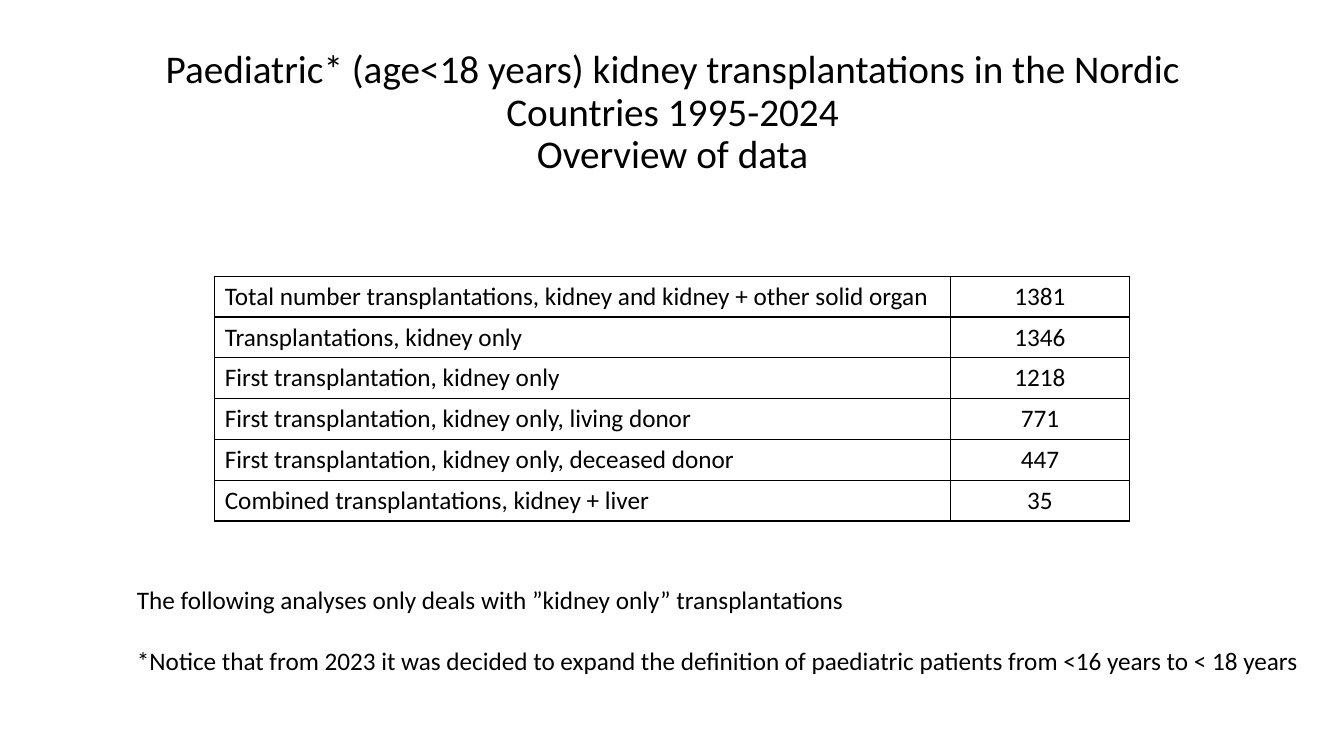
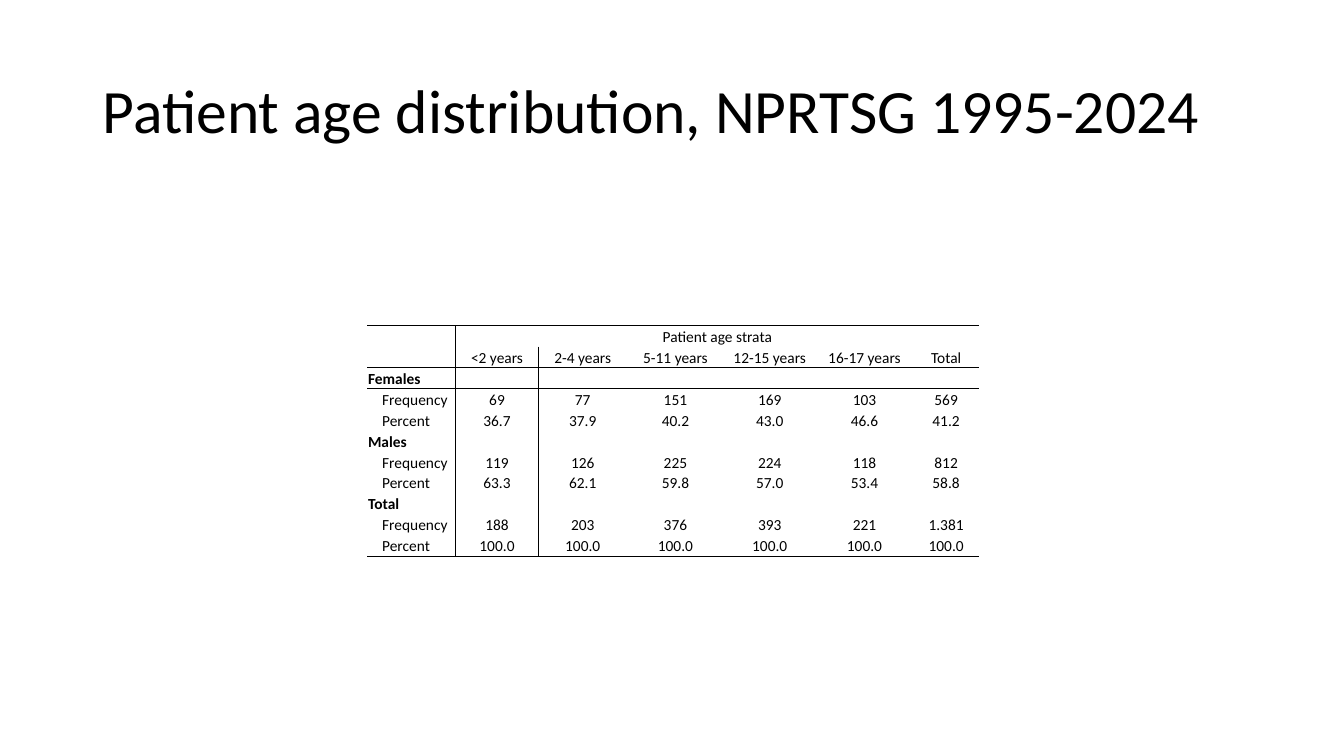
import dataclasses

import lxml.etree
import pptx
import pptx.dml.color
import pptx.enum.text
import pptx.oxml.ns
import pptx.util

Inches = pptx.util.Inches
Pt = pptx.util.Pt
Align = pptx.enum.text.PP_ALIGN
Anchor = pptx.enum.text.MSO_ANCHOR
qn = pptx.oxml.ns.qn

NO_STYLE_NO_GRID = "{2D5ABB26-0587-4C30-8999-92F81FD0307C}"

OVERVIEW = [
    ("Total number transplantations, kidney and kidney + other solid organ", "1381"),
    ("Transplantations, kidney only", "1346"),
    ("First transplantation, kidney only", "1218"),
    ("First transplantation, kidney only, living donor", "771"),
    ("First transplantation, kidney only, deceased donor", "447"),
    ("Combined transplantations, kidney + liver", "35"),
]

AGE_STRATA = ["<2 years", "2-4 years", "5-11 years", "12-15 years", "16-17 years", "Total"]
AGE_GROUPS = {
    "Females": (["69", "77", "151", "169", "103", "569"],
                ["36.7", "37.9", "40.2", "43.0", "46.6", "41.2"]),
    "Males": (["119", "126", "225", "224", "118", "812"],
              ["63.3", "62.1", "59.8", "57.0", "53.4", "58.8"]),
    "Total": (["188", "203", "376", "393", "221", "1.381"],
              ["100.0"] * 6),
}


@dataclasses.dataclass(frozen=True)
class Theme:
    font: str = "Calibri"
    ink: str = "000000"
    title_size: int = 44
    long_title_size: int = 28
    body_size: int = 18
    small_size: int = 11
    grid_width: float = 1
    rule_width: float = 0.5


class DeckBuilder:
    def __init__(self, theme):
        self.theme = theme
        self.deck = pptx.Presentation()
        self.deck.slide_width = Inches(13.33)
        self.deck.slide_height = Inches(7.5)
        self.page = None

    def add_page(self):
        self.page = self.deck.slides.add_slide(self.deck.slide_layouts[6])

    def add_span(self, para, text, size, bold=False):
        span = para.add_run()
        span.text = text
        span.font.name = self.theme.font
        span.font.size = Pt(size)
        span.font.bold = bold
        span.font.color.rgb = pptx.dml.color.RGBColor.from_string(self.theme.ink)

    def add_title(self, lines, size, align):
        box = self.page.shapes.add_textbox(Inches(0.92), Inches(0.4), Inches(11.5), Inches(1.45))
        frame = box.text_frame
        frame.word_wrap = True
        frame.vertical_anchor = Anchor.MIDDLE
        para = frame.paragraphs[0]
        para.alignment = align
        para.line_spacing = 0.9
        for index, line in enumerate(lines):
            if index:
                para.add_line_break()
            self.add_span(para, line, size)

    def add_notes_block(self, left, top, width, height, notes, gap):
        box = self.page.shapes.add_textbox(left, top, width, height)
        frame = box.text_frame
        frame.word_wrap = False
        frame.auto_size = pptx.enum.text.MSO_AUTO_SIZE.SHAPE_TO_FIT_TEXT
        for index, note in enumerate(notes):
            para = frame.add_paragraph() if index else frame.paragraphs[0]
            if index:
                para.space_before = Pt(gap)
            self.add_span(para, note, self.theme.body_size)

    def add_plain_table(self, left, top, height, row_count, column_widths):
        """Add a table without banding, grid or built-in style."""
        widths = [Inches(width) for width in column_widths]
        frame = self.page.shapes.add_table(row_count, len(widths), left, top, sum(widths), height)
        table = frame.table
        table.first_row = False
        table.horz_banding = False
        table._tbl.tblPr.find(qn("a:tableStyleId")).text = NO_STYLE_NO_GRID
        for column, width in zip(table.columns, widths):
            column.width = width
        return table

    def fill_cell(self, cell, text, size, align, sides, line_width, bold=False):
        """Write the text and rule the given sides, a subset of "LRTB"."""
        para = cell.text_frame.paragraphs[0]
        para.alignment = align
        if text:
            self.add_span(para, text, size, bold)
        else:
            # An empty cell needs its own type size, or its row would grow.
            lxml.etree.SubElement(para._p, qn("a:endParaRPr"), sz=str(size * 100))
        properties = cell._tc.get_or_add_tcPr()
        for side in sides:
            line = lxml.etree.SubElement(properties, qn(f"a:ln{side}"), w=str(Pt(line_width)))
            solid = lxml.etree.SubElement(line, qn("a:solidFill"))
            lxml.etree.SubElement(solid, qn("a:srgbClr"), val=self.theme.ink)
        cell.fill.background()


def build_overview(builder):
    theme = builder.theme
    builder.add_page()
    builder.add_title(
        ["Paediatric* (age<18 years) kidney transplantations in the Nordic Countries 1995-2024",
         "Overview of data"],
        theme.long_title_size, Align.CENTER)
    table = builder.add_plain_table(Inches(2.13), Inches(2.74), Inches(2.43),
                                    len(OVERVIEW), [7.3, 1.77])
    for row, (label, count) in enumerate(OVERVIEW):
        for column, (text, align) in enumerate([(label, Align.LEFT), (count, Align.CENTER)]):
            builder.fill_cell(table.cell(row, column), text, theme.body_size, align,
                              "LRTB", theme.grid_width)
    builder.add_notes_block(
        Inches(1.26), Inches(5.75), Inches(11.87), Inches(1.01),
        ["The following analyses only deals with ”kidney only” transplantations",
         "*Notice that from 2023 it was decided to expand the definition of paediatric "
         "patients from <16 years to < 18 years"],
        gap=22)


def age_rows():
    blanks = [""] * len(AGE_STRATA)
    rows = [["", "Patient age strata"] + blanks[1:], [""] + AGE_STRATA]
    for group, (frequencies, percents) in AGE_GROUPS.items():
        rows += [[group] + blanks, ["Frequency"] + frequencies, ["Percent"] + percents]
    return rows


def age_cell_sides(row, column, last_row):
    """Rule the header above and below, the table's foot, and the label column."""
    sides = {0: "R", 1: "L"}.get(column, "")
    if row in (0, 2):
        sides += "T"
    if row in (1, last_row):
        sides += "B"
    return sides


def build_age_distribution(builder):
    theme = builder.theme
    builder.add_page()
    builder.add_title(["Patient age distribution, NPRTSG 1995-2024"], theme.title_size, Align.LEFT)
    rows = age_rows()
    table = builder.add_plain_table(Inches(3.64), Inches(3.23), Inches(2.29), len(rows),
                                    [0.88, 0.82, 0.88, 0.96, 0.91, 0.97, 0.65])
    for row, texts in enumerate(rows):
        for column, text in enumerate(texts):
            cell = table.cell(row, column)
            is_measure = column == 0 and text in ("Frequency", "Percent")
            cell.margin_left = Inches(0.15 if is_measure else 0.01)
            cell.margin_right = cell.margin_top = Inches(0.01)
            cell.margin_bottom = 0
            cell.vertical_anchor = Anchor.BOTTOM
            builder.fill_cell(cell, text, theme.small_size,
                              Align.CENTER if column else Align.LEFT,
                              age_cell_sides(row, column, len(rows) - 1), theme.rule_width,
                              bold=column == 0 and text in AGE_GROUPS)
    table.cell(0, 1).merge(table.cell(0, len(AGE_STRATA)))


def main():
    builder = DeckBuilder(Theme())
    build_overview(builder)
    build_age_distribution(builder)
    builder.deck.save("out.pptx")


if __name__ == "__main__":
    main()
